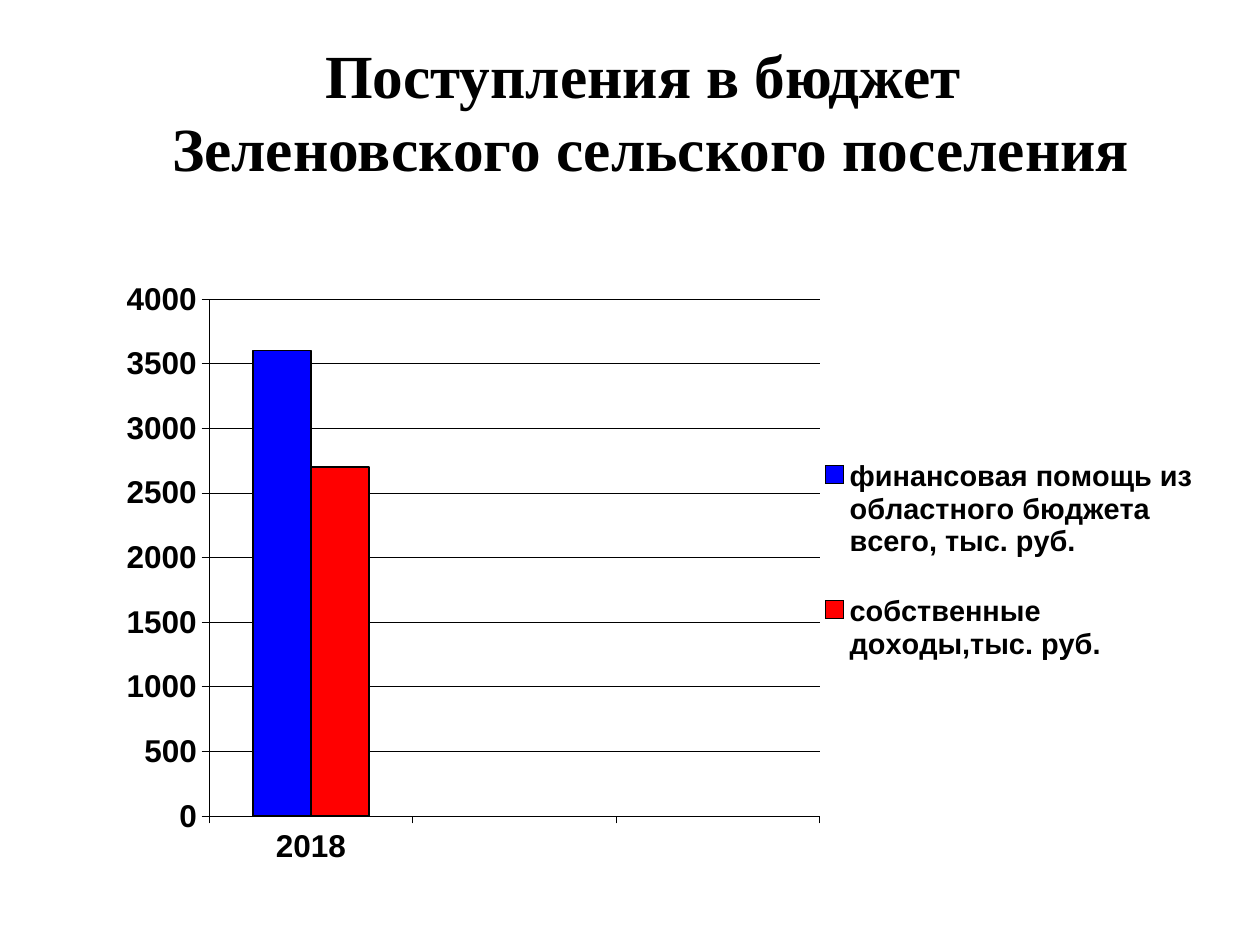
from lxml.etree import SubElement
from pptx import Presentation
from pptx.chart.data import CategoryChartData
from pptx.dml.color import RGBColor
from pptx.enum.chart import XL_CHART_TYPE, XL_LEGEND_POSITION, XL_TICK_LABEL_POSITION, XL_TICK_MARK
from pptx.enum.text import MSO_ANCHOR, PP_ALIGN
from pptx.oxml.ns import qn
from pptx.util import Pt

COLORS = {"black": "000000", "aid": "0000FF", "own": "FF0000"}
TITLE = ["Поступления в бюджет ", "Зеленовского сельского поселения"]
CATEGORIES = ["2018", "", ""]
SERIES = [
    ("финансовая помощь из областного бюджета всего, тыс. руб.", [3600, None, None], "aid"),
    ("собственные доходы,тыс. руб.", [2700, None, None], "own"),
]


def set_attrs(obj, values):
    """Set each attribute of obj from a dict."""
    for name, value in values.items():
        setattr(obj, name, value)


def set_font(font, name, size):
    """Make a font bold and black in the given face and size."""
    set_attrs(font, {"name": name, "size": Pt(size), "bold": True})
    font.color.rgb = RGBColor.from_string(COLORS["black"])


def set_line(line, width):
    """Give a line a black stroke."""
    line.color.rgb = RGBColor.from_string(COLORS["black"])
    line.width = Pt(width)


def make_layout(x, y, w, h, inner=False):
    """Return the parts of a manual chart layout as name and value pairs."""
    target = [("layoutTarget", "inner")] if inner else []
    return target + [("xMode", "edge"), ("yMode", "edge"),
                     ("x", x), ("y", y), ("w", w), ("h", h)]


def place(parent, index, parts):
    """Replace the layout of a chart part by a manual one."""
    for old in parent.findall(qn("c:layout")):
        parent.remove(old)
    layout = SubElement(parent, qn("c:layout"))
    parent.insert(index, layout)
    manual = SubElement(layout, qn("c:manualLayout"))
    for name, value in parts:
        SubElement(manual, qn(f"c:{name}")).set("val", str(value))


def add_title(s, x, y, w, h):
    """Add the centred two-line title."""
    tf = s.shapes.add_textbox(Pt(x), Pt(y), Pt(w), Pt(h)).text_frame
    set_attrs(tf, {"word_wrap": True, "vertical_anchor": MSO_ANCHOR.MIDDLE})
    for i, text in enumerate(TITLE):
        p = tf.add_paragraph() if i else tf.paragraphs[0]
        p.alignment = PP_ALIGN.CENTER
        r = p.add_run()
        r.text = text
        set_font(r.font, "Times New Roman", 35)


def format_axis(axis):
    """Format the labels, ticks and line of an axis."""
    set_attrs(axis, {"major_tick_mark": XL_TICK_MARK.OUTSIDE,
                     "minor_tick_mark": XL_TICK_MARK.NONE,
                     "tick_label_position": XL_TICK_LABEL_POSITION.LOW})
    set_font(axis.tick_labels.font, "Arial", 18)
    set_line(axis.format.line, 0.25)


def add_income_chart(s, x, y, w, h):
    """Add the column chart of budget income with its legend."""
    data = CategoryChartData()
    data.categories = CATEGORIES
    for name, values, _ in SERIES:
        data.add_series(name, values)
    chart = s.shapes.add_chart(XL_CHART_TYPE.COLUMN_CLUSTERED,
                               Pt(x), Pt(y), Pt(w), Pt(h), data).chart
    set_attrs(chart, {"has_title": False, "has_legend": True})
    set_font(chart.font, "Arial", 18)
    plot = chart.plots[0]
    set_attrs(plot, {"gap_width": 150, "overlap": 0, "vary_by_categories": False})
    for series, (_, _, color) in zip(plot.series, SERIES):
        series.invert_if_negative = False
        series.format.fill.solid()
        series.format.fill.fore_color.rgb = RGBColor.from_string(COLORS[color])
        set_line(series.format.line, 1)
    for axis in (chart.category_axis, chart.value_axis):
        format_axis(axis)
    set_attrs(chart.value_axis, {"minimum_scale": 0, "maximum_scale": 4000,
                                 "major_unit": 500, "has_major_gridlines": True})
    set_line(chart.value_axis.major_gridlines.format.line, 0.25)
    legend = chart.legend
    set_attrs(legend, {"position": XL_LEGEND_POSITION.RIGHT, "include_in_layout": False})
    set_font(legend.font, "Arial", 16.5)
    area = chart.element.find(".//" + qn("c:plotArea"))
    place(area, 0, make_layout(0.12, 0.05, 0.54, 0.83, inner=True))
    box = chart.element.find(".//" + qn("c:legend"))
    place(box, 1, make_layout(0.66, 0.25, 0.34, 0.44))


def main():
    """Build the slide and save it."""
    prs = Presentation()
    set_attrs(prs, {"slide_width": Pt(720), "slide_height": Pt(540)})
    s = prs.slides.add_slide(prs.slide_layouts[6])
    add_title(s, 48, 18, 648, 90)
    add_income_chart(s, 42, 153, 646, 356)
    prs.save("out.pptx")


if __name__ == "__main__":
    main()
